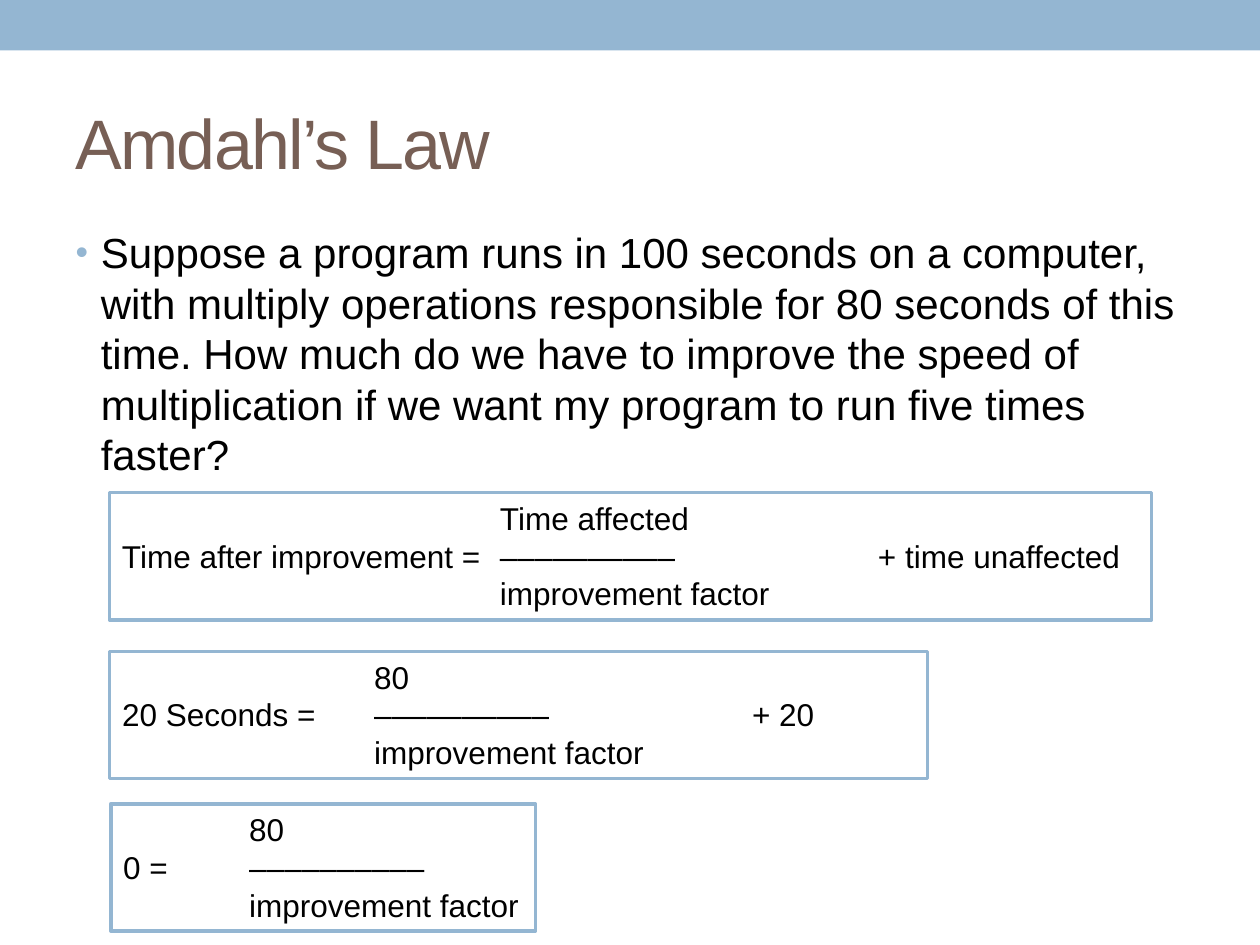
from lxml.etree import SubElement
from pptx import Presentation
from pptx.dml.color import RGBColor
from pptx.enum.shapes import MSO_SHAPE
from pptx.enum.text import MSO_ANCHOR, MSO_AUTO_SIZE, PP_ALIGN
from pptx.oxml.ns import qn
from pptx.util import Inches, Pt

BLUE = RGBColor(0x94, 0xB6, 0xD2)
BROWN = RGBColor(0x77, 0x5F, 0x55)
BLACK = RGBColor(0, 0, 0)
WHITE = RGBColor(0xFF, 0xFF, 0xFF)

TITLE = "Amdahl’s Law"
QUESTION = (
    "Suppose a program runs in 100 seconds on a computer, with multiply "
    "operations responsible for 80 seconds of this time. How much do we have "
    "to improve the speed of multiplication if we want my program to run "
    "five times faster?"
)
BAR = "–" * 10
DIVISOR = "improvement factor"
EQUATIONS = [
    {"at": (0.87, 3.91, 8.27, 1.01), "left": "Time after improvement = ",
     "top": "Time affected", "tail": "+ time unaffected", "stops": (3, 6)},
    {"at": (0.87, 5.17, 6.49, 1.01), "left": "20 Seconds = ",
     "top": "80", "tail": "+ 20", "stops": (2, 5)},
    {"at": (0.88, 6.38, 3.37, 1.01), "left": "0 = ",
     "top": "80", "tail": "", "stops": (1,)},
]
TITLE_FONT = {"name": "Arial", "size": Pt(40)}
BODY_FONT = {"name": "Arial", "size": Pt(24)}
EQUATION_FONT = {"name": "Arial", "size": Pt(18)}


def place(sp, at):
    sp.left, sp.top, sp.width, sp.height = map(Inches, at)


def write(p, text, font, color):
    r = p.add_run()
    r.text = text
    for name, value in font.items():
        setattr(r.font, name, value)
    r.font.color.rgb = color
    return r


def add_bullet(p):
    pPr = p._p.get_or_add_pPr()
    pPr.set("marL", str(Inches(0.2)))
    pPr.set("indent", str(Inches(-0.2)))
    color = SubElement(pPr, qn("a:buClr"))
    SubElement(color, qn("a:srgbClr"), val=str(BLUE))
    SubElement(pPr, qn("a:buSzPct"), val="85000")
    SubElement(pPr, qn("a:buFont"), typeface="Arial")
    SubElement(pPr, qn("a:buChar"), char="•")


def add_tabs(p, stops):
    tabs = SubElement(p._p.get_or_add_pPr(), qn("a:tabLst"))
    for stop in stops:
        SubElement(tabs, qn("a:tab"), pos=str(Inches(stop)), algn="l")


def add_equation(s, eq):
    sp = s.shapes.add_textbox(*map(Inches, eq["at"]))
    sp.fill.solid()
    sp.fill.fore_color.rgb = WHITE
    sp.line.color.rgb = BLUE
    sp.line.width = Pt(2.08)
    tf = sp.text_frame
    tf.word_wrap = True
    tail = "\t" + eq["tail"] if eq["tail"] else ""
    lines = ["\t" + eq["top"], eq["left"] + "\t" + BAR + tail, "\t" + DIVISOR]
    for i, line in enumerate(lines):
        p = tf.add_paragraph() if i else tf.paragraphs[0]
        add_tabs(p, eq["stops"])
        write(p, line, EQUATION_FONT, BLACK)


def main():
    prs = Presentation()
    prs.slide_width, prs.slide_height = Inches(10), Inches(7.5)
    s = prs.slides.add_slide(prs.slide_layouts[1])

    band = s.shapes.add_shape(MSO_SHAPE.RECTANGLE, 0, 0, Inches(10), Inches(0.4))
    band.shadow.inherit = False
    band.fill.solid()
    band.fill.fore_color.rgb = BLUE
    band.line.fill.background()

    title, body = s.placeholders
    place(title, (0.5, 0.58, 9, 1.08))
    tf = title.text_frame
    tf.vertical_anchor = MSO_ANCHOR.MIDDLE
    tf.auto_size = MSO_AUTO_SIZE.NONE
    p = tf.paragraphs[0]
    p.alignment = PP_ALIGN.LEFT
    r = write(p, TITLE, TITLE_FONT, BROWN)
    r.font._element.set("spc", "-100")

    place(body, (0.5, 1.75, 9, 5.33))
    tf = body.text_frame
    tf.auto_size = MSO_AUTO_SIZE.NONE
    p = tf.paragraphs[0]
    add_bullet(p)
    p.space_before = Pt(0)
    write(p, QUESTION, BODY_FONT, BLACK)

    for eq in EQUATIONS:
        add_equation(s, eq)
    prs.save("out.pptx")


if __name__ == "__main__":
    main()
